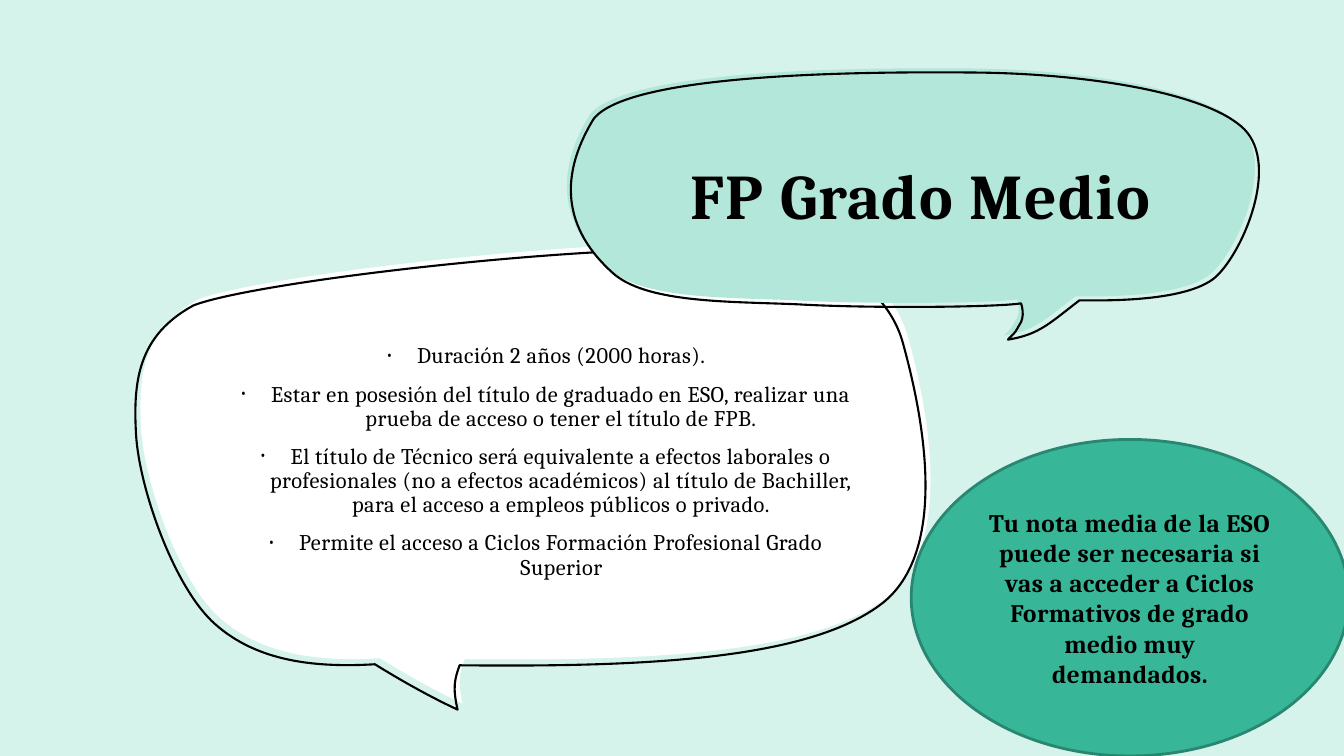
from lxml import etree
from pptx import Presentation
from pptx.dml.color import RGBColor
from pptx.enum.shapes import MSO_SHAPE
from pptx.enum.text import MSO_ANCHOR, PP_ALIGN
from pptx.oxml.ns import qn
from pptx.util import Inches, Pt

RECTANGLE = MSO_SHAPE.RECTANGLE
OVAL = MSO_SHAPE.OVAL
MIDDLE = MSO_ANCHOR.MIDDLE
CENTER = PP_ALIGN.CENTER

BLACK = RGBColor(0x00, 0x00, 0x00)
WHITE = RGBColor(0xFF, 0xFF, 0xFF)
PALE_MINT = RGBColor(0xD5, 0xF2, 0xEB)
MINT = RGBColor(0xB2, 0xE7, 0xDA)
GREEN = RGBColor(0x38, 0xB6, 0x98)
DARK_GREEN = RGBColor(0x29, 0x86, 0x70)

BODY_BOX = (1.4, 2.41, 7.84, 4.58)
BODY_BUBBLE = [
    (3.77, 6.53),
    (3.11, 6.57, 2.55, 6.48, 2.15, 6.1),
    (1.76, 5.72, 1.43, 4.77, 1.4, 4.25),
    (1.37, 3.72, 1.42, 3.27, 1.97, 2.97),
    (2.61, 2.72, 6.26, 2.3, 7.76, 2.43),
    (8.46, 2.51, 8.89, 2.9, 9.01, 3.35),
    (9.18, 3.97, 9.51, 5.42, 8.77, 5.95),
    (8.04, 6.48, 6.48, 6.56, 4.61, 6.54),
    (4.56, 6.68, 4.54, 6.76, 4.59, 6.98),
    (4.18, 6.79, 3.77, 6.53, 3.77, 6.53),
]
TITLE_BOX = (5.62, 0.68, 6.83, 2.66)
TITLE_BUBBLE = [
    (10.09, 2.97),
    (9.84, 3.01, 8.57, 3.02, 7.88, 2.98),
    (7.19, 2.95, 6.36, 2.97, 6.03, 2.66),
    (5.69, 2.35, 5.41, 1.86, 5.85, 1.14),
    (6.21, 0.68, 8.57, 0.67, 9.64, 0.68),
    (10.71, 0.69, 11.87, 0.87, 12.27, 1.21),
    (12.67, 1.54, 12.32, 2.4, 12.05, 2.68),
    (11.79, 2.97, 10.85, 2.94, 10.67, 2.94),
    (10.37, 3.17, 10.27, 3.28, 9.96, 3.33),
    (10.02, 3.26, 10.01, 3.3, 10.07, 3.19),
    (10.14, 3.1, 10.09, 2.97, 10.09, 2.97),
]
REQUIREMENTS = [
    "Duración 2 años (2000 horas).",
    "Estar en posesión del título de graduado en ESO, realizar una prueba de acceso o tener el título de FPB.",
    "El título de Técnico será equivalente a efectos laborales o profesionales (no a efectos académicos) "
    "al título de Bachiller, para el acceso a empleos públicos o privado.",
    "Permite el acceso a Ciclos Formación Profesional Grado Superior",
]
GRADE_NOTE = ("Tu nota media de la ESO puede ser necesaria si vas a acceder a "
              "Ciclos Formativos de grado medio muy demandados.")


def add_bubble(outline, box, dx, dy):
    ends = [(Inches(c[-2]), Inches(c[-1])) for c in outline]
    builder = s.shapes.build_freeform(*ends[0], scale=1.0)
    builder.add_line_segments(ends[1:], close=True)
    sp = builder.convert_to_shape()
    sp.shadow.inherit = False
    left, top, width, height = box
    frame = {"left": left + dx, "top": top + dy, "width": width, "height": height}
    for name, value in frame.items():
        setattr(sp, name, Inches(value))
    curve = sp._element.find(".//" + qn("a:path"))
    for child in list(curve):
        curve.remove(child)
    curve.set("w", str(Inches(width)))
    curve.set("h", str(Inches(height)))
    for i, coords in enumerate(outline):
        step = etree.SubElement(curve, qn("a:cubicBezTo" if i else "a:moveTo"))
        for x, y in zip(coords[::2], coords[1::2]):
            etree.SubElement(step, qn("a:pt"), x=str(Inches(x - left)), y=str(Inches(y - top)))
    etree.SubElement(curve, qn("a:close"))
    return sp


def write_text(sp, lines, size, bold, spacing, bulleted=False):
    tf = sp.text_frame
    tf.word_wrap = True
    tf.vertical_anchor = MIDDLE
    for i, line in enumerate(lines):
        p = tf.paragraphs[0] if i == 0 else tf.add_paragraph()
        p.alignment = CENTER
        if bulleted:
            p.line_spacing = 0.9
            p.space_before = Pt(10 if i else 0)
            pPr = p._p.get_or_add_pPr()
            pPr.set("marL", str(Inches(0.31)))
            pPr.set("indent", str(Inches(-0.31)))
            color = etree.SubElement(pPr, qn("a:buClr"))
            etree.SubElement(color, qn("a:srgbClr"), val=str(BLACK))
            etree.SubElement(pPr, qn("a:buSzPct"), val="73000")
            etree.SubElement(pPr, qn("a:buFont"), typeface="Cambria")
            etree.SubElement(pPr, qn("a:buChar"), char="•")
        r = p.add_run()
        r.text = line
        for name, value in {"name": "Cambria", "size": Pt(size), "bold": bold}.items():
            setattr(r.font, name, value)
        r.font.color.rgb = BLACK
        r._r.get_or_add_rPr().set("spc", str(spacing))


prs = Presentation()
prs.slide_width = Inches(40 / 3)
prs.slide_height = Inches(7.5)
s = prs.slides.add_slide(prs.slide_layouts[6])
s.background.fill.solid()
s.background.fill.fore_color.rgb = PALE_MINT

backdrop = s.shapes.add_shape(RECTANGLE, 0, 0, prs.slide_width, prs.slide_height)
backdrop.shadow.inherit = False
backdrop.fill.solid()
backdrop.fill.fore_color.rgb = PALE_MINT
backdrop.line.fill.background()

for outline, box, color, dx, dy in [(BODY_BUBBLE, BODY_BOX, WHITE, -0.05, 0.06),
                                    (TITLE_BUBBLE, TITLE_BOX, MINT, 0.04, 0.04)]:
    sp = add_bubble(outline, box, 0, 0)
    sp.fill.solid()
    sp.fill.fore_color.rgb = color
    sp.line.fill.background()
    sp = add_bubble(outline, box, dx, dy)
    sp.fill.background()
    sp.line.color.rgb = BLACK
    sp.line.width = Pt(1.5)

title = s.shapes.add_textbox(Inches(6.43), Inches(1.18), Inches(5.41), Inches(1.49))
write_text(title, ["FP Grado Medio"], 45.4, True, 90)

body = s.shapes.add_textbox(Inches(2.21), Inches(3.14), Inches(6.41), Inches(2.89))
write_text(body, REQUIREMENTS, 16, False, 36, bulleted=True)

note = s.shapes.add_shape(OVAL, Inches(9.04), Inches(4.36), Inches(4.34), Inches(3.14))
note.shadow.inherit = False
note.fill.solid()
note.fill.fore_color.rgb = GREEN
note.line.color.rgb = DARK_GREEN
note.line.width = Pt(2)
write_text(note, [GRADE_NOTE], 18, True, 36)

prs.save("out.pptx")
